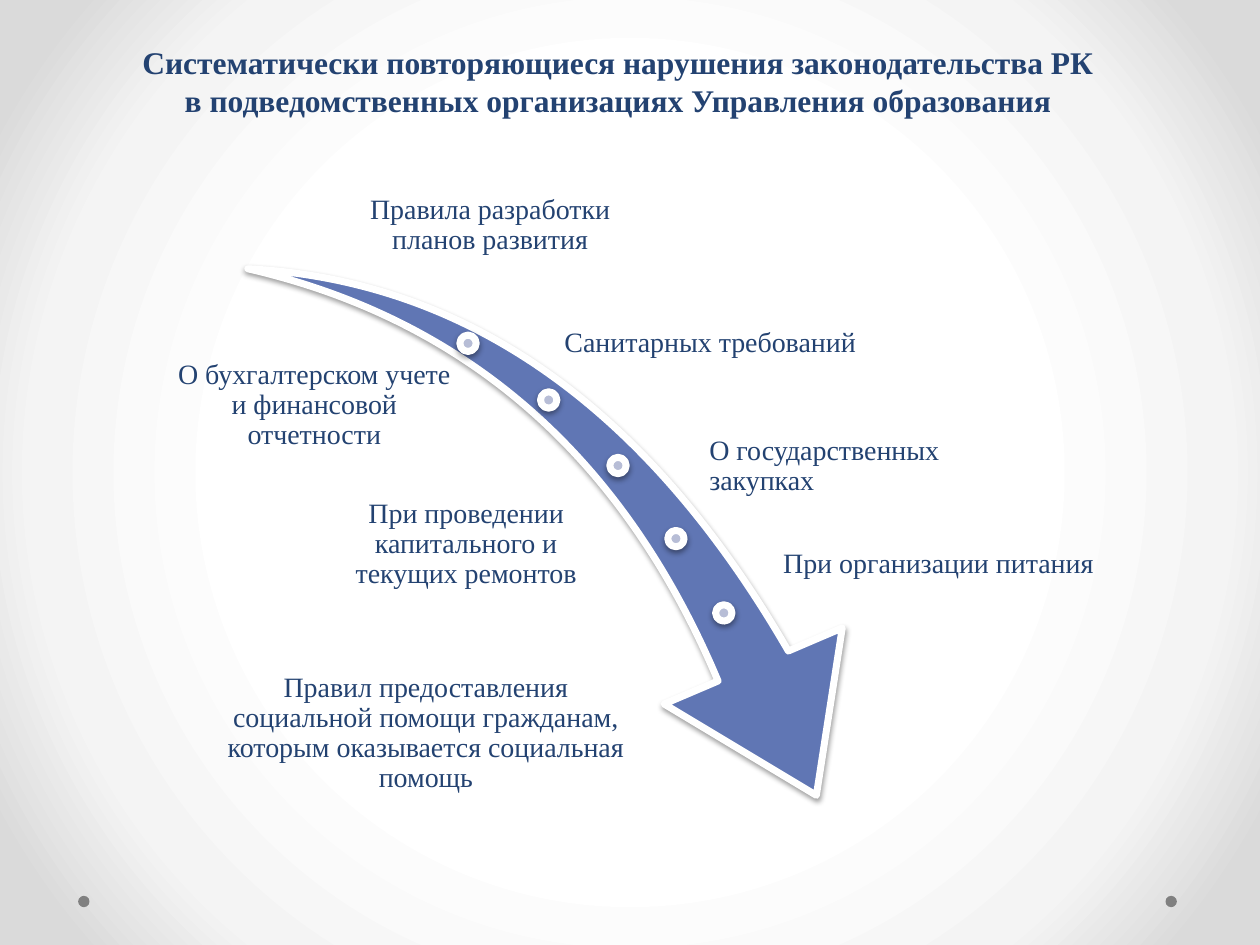
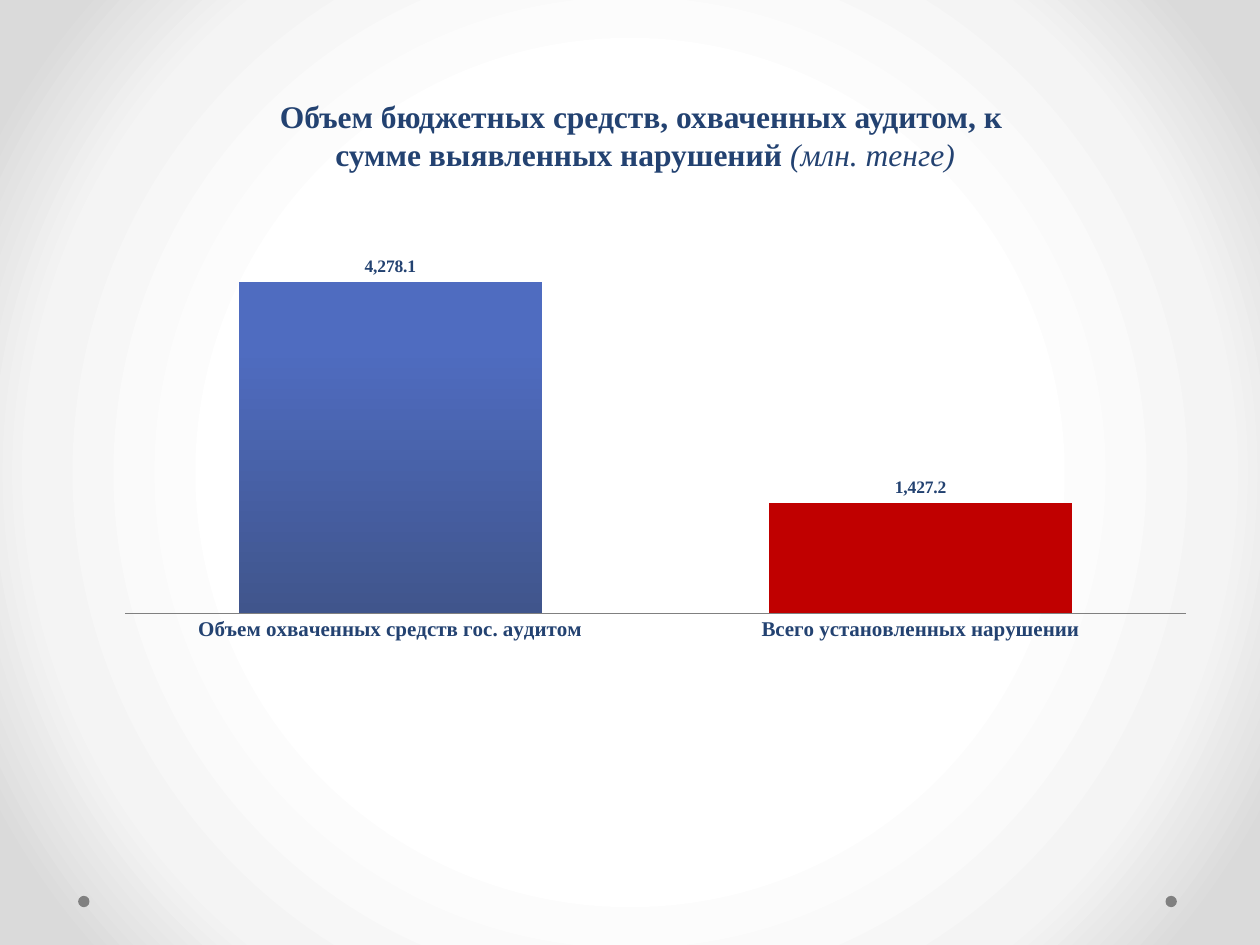
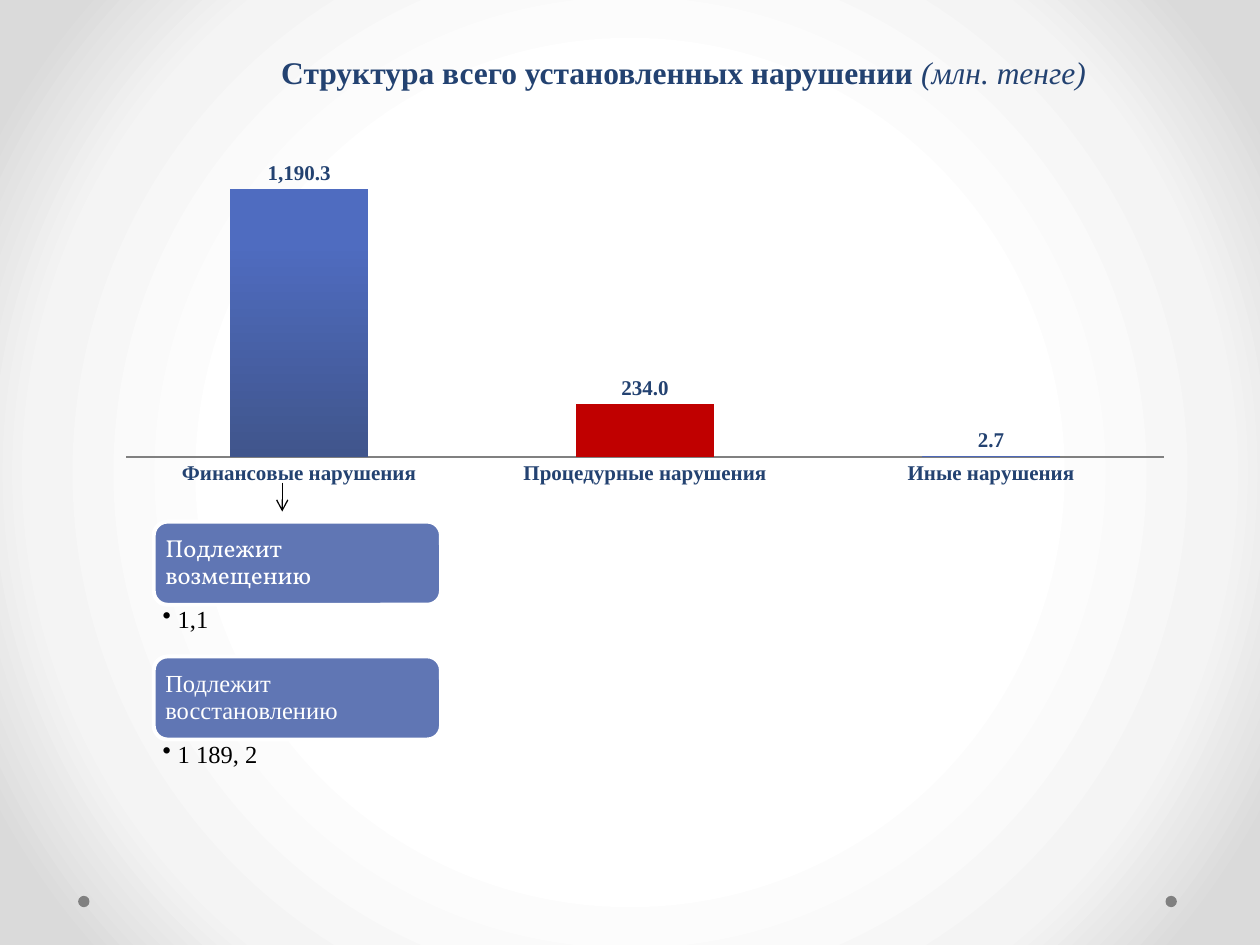
from lxml import etree
from pptx import Presentation
from pptx.chart.data import CategoryChartData
from pptx.dml.color import RGBColor
from pptx.enum.chart import XL_CHART_TYPE, XL_LABEL_POSITION, XL_TICK_MARK
from pptx.enum.shapes import MSO_CONNECTOR, MSO_SHAPE
from pptx.enum.text import MSO_ANCHOR, MSO_AUTO_SIZE, PP_ALIGN
from pptx.oxml import parse_xml
from pptx.oxml.ns import nsdecls, qn
from pptx.util import Inches, Pt

LEFT, CENTER, RIGHT = PP_ALIGN.LEFT, PP_ALIGN.CENTER, PP_ALIGN.RIGHT
TOP, MIDDLE, BOTTOM = MSO_ANCHOR.TOP, MSO_ANCHOR.MIDDLE, MSO_ANCHOR.BOTTOM
OVAL, ROUND, SWOOSH = MSO_SHAPE.OVAL, MSO_SHAPE.ROUNDED_RECTANGLE, MSO_SHAPE.SWOOSH_ARROW
NAVY, BLUE, RED, GREY = "234271", "6076B4", "C00000", "808080"
WHITE, BLACK, PALE = "FFFFFF", "000000", "B7BDD6"
SERIF, VOLL = "Times New Roman", "Vollkorn"
FORMAT = "#,##0.0"


def rgb(code):
    return RGBColor.from_string(code)


def write(frame, text, size, color=NAVY, face=SERIF, align=LEFT, anchor=MIDDLE,
          pad=(0.02, 0.02, 0.02, 0.02)):
    frame.word_wrap = True
    frame.vertical_anchor = anchor
    frame.margin_left, frame.margin_top, frame.margin_right, frame.margin_bottom = map(Inches, pad)
    frame.text = text
    for par in frame.paragraphs:
        par.alignment = align
        par.line_spacing = 0.9
        for run in par.runs:
            run.font.size, run.font.name = Pt(size), face
            run.font.color.rgb = rgb(color)


deck = Presentation()
deck.slide_width, deck.slide_height = Inches(10), Inches(7.5)

# Shared background
master = deck.slide_master
stops = "".join(f'<a:gs pos="{pos}000"><a:srgbClr val="{code}"/></a:gs>'
                for pos, code in ((50, WHITE), (76, "F4F4F4"), (92, "DADADA")))
back = master.background.fill
back.solid()
solid = master.element.find(".//" + qn("p:bgPr")).find(qn("a:solidFill"))
solid.getparent().replace(solid, parse_xml(
    f'<a:gradFill {nsdecls("a")} rotWithShape="1"><a:gsLst>{stops}</a:gsLst>'
    '<a:path path="circle"><a:fillToRect l="50000" t="50000" r="50000" b="50000"/></a:path>'
    '</a:gradFill>'))

# Slides and titles: lines, place, note in italics
TITLES = [
    ("Систематически повторяющиеся нарушения законодательства РК\n"
     "в подведомственных организациях Управления образования", (0.99, 0.29, 7.83, 0.71), ""),
    ("Объем бюджетных средств, охваченных аудитом, к \nсумме выявленных нарушений ",
     (2.09, 0.72, 6.06, 0.71), "(млн. тенге)"),
    ("Структура всего установленных нарушении ", (2.1, 0.37, 6.65, 0.4), "(млн. тенге)"),
]
slides = []
for text, spot, note in TITLES:
    slide = deck.slides.add_slide(deck.slide_layouts[5])
    slides.append(slide)
    title = slide.shapes.title
    title.left, title.top, title.width, title.height = map(Inches, spot)
    frame = title.text_frame
    frame.text = text
    frame.word_wrap = False
    frame.auto_size = MSO_AUTO_SIZE.SHAPE_TO_FIT_TEXT
    frame.vertical_anchor = TOP
    if note:
        frame.paragraphs[-1].add_run().text = note
    for par in frame.paragraphs:
        par.alignment = CENTER
        for run in par.runs:
            run.font.size, run.font.name = Pt(18), SERIF
            run.font.color.rgb = rgb(NAVY)
            run.font.bold = run.text != note
            run.font.italic = run.text == note
rules, volume, parts = slides

# Shared corner dots, moved to the master
for x in (0.62, 9.25):
    dot = rules.shapes.add_shape(OVAL, Inches(x), Inches(7.11), Inches(0.09), Inches(0.09))
    dot.shadow.inherit = False
    dot.fill.solid()
    dot.fill.fore_color.rgb = rgb(GREY)
    dot.line.fill.background()
    master.shapes._spTree.append(dot._element)

# Slide 1: curved arrow with five beads
D = 0.13
MARKS = [(SWOOSH, 1.85, 2.29, 5.3, 3.7, BLUE)]
MARKS += [(OVAL, x, y, D, D, PALE) for x, y in
          ((3.65, 2.66), (4.29, 3.11), (4.84, 3.63), (5.3, 4.21), (5.68, 4.8))]
for kind, x, y, w, h, color in MARKS:
    mark = rules.shapes.add_shape(kind, Inches(x), Inches(y), Inches(w), Inches(h))
    mark.fill.solid()
    mark.fill.fore_color.rgb = rgb(color)
    mark.line.color.rgb = rgb(WHITE)
    mark.line.width = Pt(4)
    mark.shadow.inherit = False
    glow = mark._element.spPr.find(qn("a:effectLst"))
    glow.append(parse_xml(
        f'<a:outerShdw {nsdecls("a")} blurRad="40000" dist="20000" dir="5400000" rotWithShape="0">'
        '<a:srgbClr val="000000"><a:alpha val="38000"/></a:srgbClr></a:outerShdw>'))
    if kind == SWOOSH:
        mark.rotation = 73.3
        mark.adjustments[0], mark.adjustments[1] = 0.163, 0.314

# Slide 1: labels along the arrow
LABELS = [
    ("Правила разработки планов развития", 2.64, 1.62, 2.5, 0.43, CENTER, BOTTOM),
    ("Санитарных требований", 4.46, 2.49, 3.78, 0.47, LEFT, MIDDLE),
    ("О бухгалтерском учете и финансовой отчетности", 1.38, 2.73, 2.23, 0.98, CENTER, MIDDLE),
    ("О государственных закупках", 5.61, 3.21, 2.64, 0.98, LEFT, MIDDLE),
    ("При организации питания", 5.32, 3.99, 3.38, 0.98, RIGHT, MIDDLE),
    ("При проведении капитального и текущих ремонтов", 2.72, 3.83, 1.96, 0.98, CENTER, MIDDLE),
    ("Правил предоставления социальной помощи гражданам, которым оказывается "
     "социальная помощь", 1.69, 5.32, 3.38, 0.98, CENTER, TOP),
]
for text, x, y, w, h, align, anchor in LABELS:
    label = rules.shapes.add_textbox(Inches(x), Inches(y), Inches(w), Inches(h))
    write(label.text_frame, text, 16, align=align, anchor=anchor)

# Slides 2 and 3: column charts
CHARTS = [
    (volume, (0.74, 1.94, 8.74, 3.7), 75, 0, 10, (0.029, 0.043, 0.963, 0.749),
     {"Объем охваченных средств гос. аудитом": 4278.1, "Всего установленных нарушении": 1427.2}),
    (parts, (0.83, 1.07, 8.58, 2.83), 150, -25, 12, None,
     {"Финансовые нарушения": 1190.3, "Процедурные нарушения": 234, "Иные нарушения": 2.7}),
]
for slide, spot, gap, lap, size, inner, sums in CHARTS:
    data = CategoryChartData(number_format=FORMAT)
    data.categories = list(sums)
    data.add_series("Series 1", list(sums.values()))
    chart = slide.shapes.add_chart(XL_CHART_TYPE.COLUMN_CLUSTERED, *map(Inches, spot), data).chart
    chart.has_legend = chart.has_title = False
    chart.font.size, chart.font.name = Pt(10), VOLL
    chart.font.color.rgb = rgb(BLACK)

    # Axes
    scale, base = chart.value_axis, chart.category_axis
    scale.visible = scale.has_major_gridlines = False
    scale.minimum_scale = 0
    scale.tick_labels.number_format = FORMAT
    scale.tick_labels.number_format_is_linked = False
    base.major_tick_mark = XL_TICK_MARK.NONE
    base.format.line.color.rgb = rgb(GREY)

    # Columns
    plot = chart.plots[0]
    plot.gap_width, plot.overlap = gap, lap
    plot.vary_by_categories = False
    bars = plot.series[0]
    bars.invert_if_negative = False
    fill = bars.format.fill
    fill.gradient()
    fill.gradient_angle = 270
    for stop, pos, color in zip(fill.gradient_stops, (0.2, 1), ("4F6CC0", "40558C")):
        stop.position = pos
        stop.color.rgb = rgb(color)
    second = bars.points[1].format.fill
    second.solid()
    second.fore_color.rgb = rgb(RED)

    # Value labels and category names
    tags = bars.data_labels
    tags.show_value = True
    tags.number_format, tags.number_format_is_linked = FORMAT, False
    tags.position = XL_LABEL_POSITION.OUTSIDE_END
    for font, points in ((tags.font, size), (base.tick_labels.font, 12)):
        font.size, font.name, font.bold = Pt(points), SERIF, True
        font.color.rgb = rgb(NAVY)

    # Fixed plot area
    if inner:
        area = chart._chartSpace.find(".//" + qn("c:plotArea"))
        for old in area.findall(qn("c:layout")):
            area.remove(old)
        layout = etree.Element(qn("c:layout"))
        area.insert(0, layout)
        manual = etree.SubElement(layout, qn("c:manualLayout"))
        sides = zip(("x", "y", "w", "h"), inner)
        for tag, val in [("layoutTarget", "inner"), ("xMode", "edge"), ("yMode", "edge"), *sides]:
            etree.SubElement(manual, qn("c:" + tag)).set("val", str(val))

# Slide 3: financial violations in detail
CARDS = [("Подлежит возмещению", VOLL, "1,1"), ("Подлежит восстановлению", SERIF, "1 189, 2")]
for i, (text, face, total) in enumerate(CARDS):
    y = 4.14 + i * 1.07
    card = parts.shapes.add_shape(ROUND, Inches(1.22), Inches(y), Inches(2.28), Inches(0.66))
    card.shadow.inherit = False
    card.fill.solid()
    card.fill.fore_color.rgb = rgb(BLUE)
    card.line.color.rgb = rgb(WHITE)
    card.line.width = Pt(2.25)
    write(card.text_frame, text, 14, WHITE, face, pad=(0.06, 0.06, 0.06, 0.06))

    item = parts.shapes.add_textbox(Inches(1.22), Inches(y + 0.66), Inches(2.28), Inches(0.4))
    write(item.text_frame, total, 14, BLACK, anchor=TOP, pad=(0.07, 0.02, 0.11, 0.02))
    props = item.text_frame.paragraphs[0]._p.get_or_add_pPr()
    props.set("marL", str(Inches(0.12)))
    props.set("indent", str(-Inches(0.12)))
    etree.SubElement(props, qn("a:buChar")).set("char", "•")

# Slide 3: arrow from the chart to the cards
arrow = parts.shapes.add_connector(MSO_CONNECTOR.STRAIGHT, Inches(2.24), Inches(3.83),
                                   Inches(2.24), Inches(4.06))
arrow.line.color.rgb = rgb(BLACK)
arrow.line.width = Pt(0.75)
etree.SubElement(arrow.line._get_or_add_ln(), qn("a:tailEnd")).set("type", "arrow")
etree.SubElement(arrow._element.spPr, qn("a:effectLst"))

deck.save("out.pptx")
